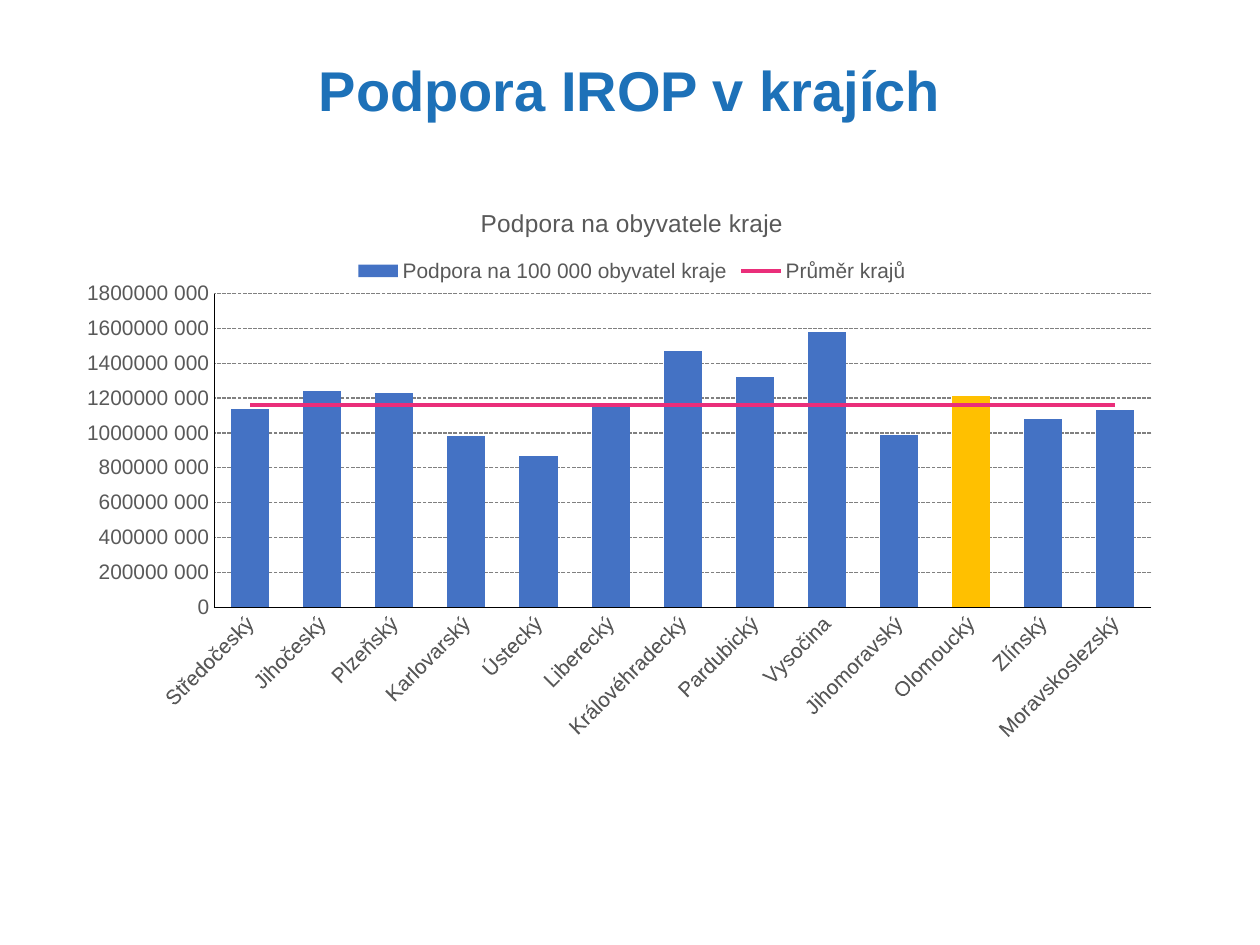
"""Build a slide that charts IROP support by region against the average."""
import pptx
import pptx.chart.data
import pptx.dml.color
import pptx.enum.chart
import pptx.enum.dml
import pptx.enum.text
import pptx.oxml
import pptx.oxml.ns
import pptx.util

HEAD = "Podpora IROP v krajích"
TITLE = "Podpora na obyvatele kraje"
BARS = "Podpora na 100 000 obyvatel kraje"
MEAN = "Průměr krajů"
REGIONS = [
    ("Středočeský", 1140), ("Jihočeský", 1240), ("Plzeňský", 1230),
    ("Karlovarský", 980), ("Ústecký", 870), ("Liberecký", 1150),
    ("Královéhradecký", 1470), ("Pardubický", 1320), ("Vysočina", 1580),
    ("Jihomoravský", 990), ("Olomoucký", 1210), ("Zlínský", 1080),
    ("Moravskoslezský", 1130),
]
FOCUS = "Olomoucký"
AVERAGE = 1160
MILLION = 10 ** 6
COLORS = {"head": "1D71B8", "text": "595959", "axis": "000000", "grid": "808080",
          "bar": "4472C4", "focus": "FFC000", "mean": "EA2E7A"}
FONT = "Arial"
SCALE = 914400 / 126
HEAD_BOX = (87, 14, 1086, 159)
CHART_BOX = (87, 185, 1086, 581)
PLOT = {"x": 0.114, "y": 0.187, "w": 0.866, "h": 0.54}


def px(count):
    return pptx.util.Emu(round(count * SCALE))


def tint(name):
    return pptx.dml.color.RGBColor.from_string(COLORS[name])


def style(font, size, color, bold=False):
    font.name, font.size, font.bold = FONT, pptx.util.Pt(size), bold
    font.color.rgb = tint(color)


def stroke(line, color, width):
    line.color.rgb = tint(color)
    line.width = pptx.util.Pt(width)


def add_head(slide):
    head = slide.shapes.title
    head.left, head.top, head.width, head.height = map(px, HEAD_BOX)
    frame = head.text_frame
    frame.word_wrap = True
    frame.vertical_anchor = pptx.enum.text.MSO_ANCHOR.MIDDLE
    para = frame.paragraphs[0]
    para.alignment = pptx.enum.text.PP_ALIGN.CENTER
    para.line_spacing = 0.9
    run = para.add_run()
    run.text = HEAD
    style(run.font, 32, "head", True)


def split_line(chart):
    """Move the second bar series into a line plot on the same axes."""
    qn = pptx.oxml.ns.qn
    bars = chart.plots[0]._element
    mean = bars.findall(qn("c:ser"))[1]
    for flag in mean.findall(qn("c:invertIfNegative")):
        mean.remove(flag)
    plot = pptx.oxml.parse_xml(
        f'<c:lineChart {pptx.oxml.ns.nsdecls("c")}><c:grouping val="standard"/>'
        '<c:varyColors val="0"/><c:marker val="1"/></c:lineChart>')
    plot.insert(2, mean)
    for axis in bars.findall(qn("c:axId")):
        plot.append(pptx.oxml.parse_xml(
            f'<c:axId {pptx.oxml.ns.nsdecls("c")} val="{axis.get("val")}"/>'))
    bars.addnext(plot)


def place_plot(chart):
    area = chart._chartSpace.chart.plotArea
    for old in area.findall(pptx.oxml.ns.qn("c:layout")):
        area.remove(old)
    modes = '<c:xMode val="edge"/><c:yMode val="edge"/>'
    sides = "".join(f'<c:{key} val="{val}"/>' for key, val in PLOT.items())
    area.insert(0, pptx.oxml.parse_xml(
        f'<c:layout {pptx.oxml.ns.nsdecls("c")}><c:manualLayout>'
        f'<c:layoutTarget val="inner"/>{modes}{sides}'
        '</c:manualLayout></c:layout>'))


def style_axes(chart):
    cats, vals = chart.category_axis, chart.value_axis
    none = pptx.enum.chart.XL_TICK_MARK.NONE
    for axis in (cats, vals):
        axis.major_tick_mark = axis.minor_tick_mark = none
        style(axis.tick_labels.font, 12, "text")
        stroke(axis.format.line, "axis", 0.75)
    body = cats._element.find(".//" + pptx.oxml.ns.qn("a:bodyPr"))
    body.set("rot", "-2700000")
    body.set("vert", "horz")
    vals.minimum_scale, vals.maximum_scale = 0, 1800 * MILLION
    vals.major_unit = 200 * MILLION
    vals.tick_labels.number_format = "#\\ ##0"
    vals.tick_labels.number_format_is_linked = False
    grid = vals.major_gridlines.format.line
    stroke(grid, "grid", 0.75)
    grid.dash_style = pptx.enum.dml.MSO_LINE.SQUARE_DOT


def add_chart(slide):
    names = [name for name, _ in REGIONS]
    data = pptx.chart.data.CategoryChartData()
    data.categories = names
    data.add_series(BARS, [val * MILLION for _, val in REGIONS])
    data.add_series(MEAN, [AVERAGE * MILLION] * len(REGIONS))
    kind = pptx.enum.chart.XL_CHART_TYPE.COLUMN_CLUSTERED
    chart = slide.shapes.add_chart(kind, *map(px, CHART_BOX), data).chart
    style(chart.font, 10, "axis")

    chart.has_title = True
    run = chart.chart_title.text_frame.paragraphs[0].add_run()
    run.text = TITLE
    style(run.font, 14, "text")
    chart.chart_title.include_in_layout = False
    chart.has_legend = True
    chart.legend.position = pptx.enum.chart.XL_LEGEND_POSITION.TOP
    chart.legend.include_in_layout = False
    style(chart.legend.font, 12, "text")

    split_line(chart)
    place_plot(chart)
    style_axes(chart)
    bars, line = chart.plots
    bars.gap_width = 89
    bars.vary_by_categories = False
    support, mean = bars.series[0], line.series[0]
    focus = support.points[names.index(FOCUS)]
    for part, color in ((support, "bar"), (focus, "focus")):
        part.format.fill.solid()
        part.format.fill.fore_color.rgb = tint(color)
    stroke(mean.format.line, "mean", 2.75)
    mean.marker.style = pptx.enum.chart.XL_MARKER_STYLE.NONE
    mean.smooth = False


def main():
    deck = pptx.Presentation()
    deck.slide_width, deck.slide_height = px(1260), px(945)
    slide = deck.slides.add_slide(deck.slide_layouts[5])
    add_head(slide)
    add_chart(slide)
    deck.save("out.pptx")


if __name__ == "__main__":
    main()
